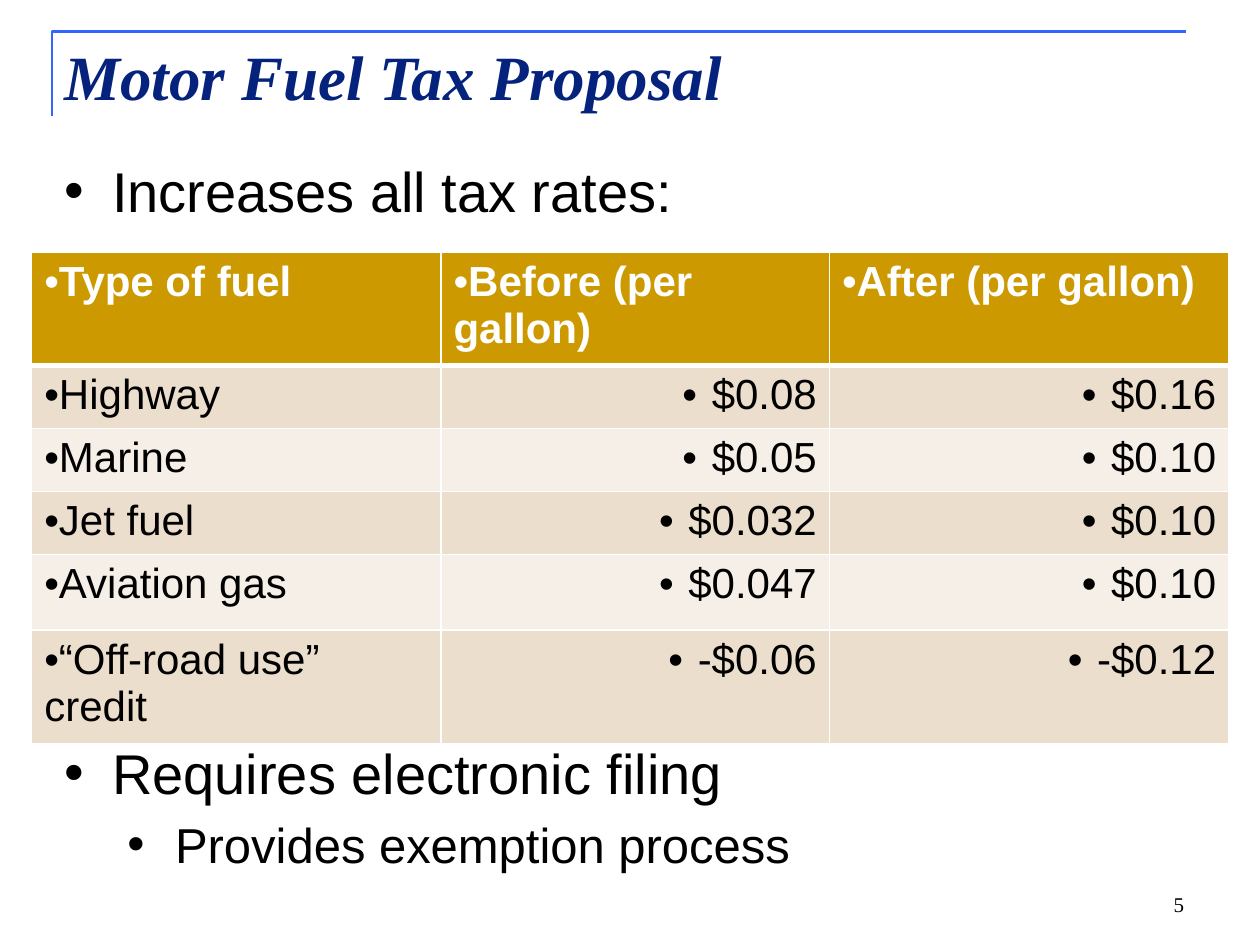
from lxml import etree
from pptx import Presentation
from pptx.dml.color import RGBColor
from pptx.enum.text import MSO_ANCHOR, PP_ALIGN
from pptx.oxml.ns import qn
from pptx.util import Cm, Pt

LEFT, RIGHT = PP_ALIGN.LEFT, PP_ALIGN.RIGHT
TOP, BOTTOM = MSO_ANCHOR.TOP, MSO_ANCHOR.BOTTOM

TITLE = "Motor Fuel Tax Proposal"
PAGE = "5"
POINTS = [
    {"text": "Increases all tax rates:", "style": "point", "level": 0, "before": 5},
    {"text": "Requires electronic filing", "style": "point", "level": 0, "before": 294},
    {"text": "Provides exemption process", "style": "subpoint", "level": 1, "before": 5},
]
RATES = [
    ("Type of fuel", "Before (per gallon)", "After (per gallon)"),
    ("Highway", "$0.08", "$0.16"),
    ("Marine", "$0.05", "$0.10"),
    ("Jet fuel", "$0.032", "$0.10"),
    ("Aviation gas", "$0.047", "$0.10"),
    ("“Off-road use” credit", "-$0.06", "-$0.12"),
]
COL_WIDTHS = (8.25, 7.83, 8.05)
ROW_HEIGHTS = (2.26, 1.27, 1.27, 1.27, 1.52, 2.29)
MARGIN, RULE_TOP = 1.05, 0.63
POINT_HANG, RATE_HANG, LEVEL_STEP = 0.96, 0.59, 1.27

THEME = {
    "rule": "3366FF",
    "header": "CC9900",
    "bands": ("F6EFE7", "ECDECC"),
    "border": "FFFFFF",
    "title": {"name": "Times New Roman", "size": 36, "color": "05227D", "bold": True, "italic": True},
    "page": {"name": "Times New Roman", "size": 12, "color": "000000"},
    "point": {"name": "Arial", "size": 32, "color": "000000"},
    "subpoint": {"name": "Arial", "size": 28, "color": "000000"},
    "head": {"name": "Arial", "size": 24, "color": "FFFFFF", "bold": True},
    "cell": {"name": "Arial", "size": 24, "color": "000000", "bold": False},
}


def write(p, text, style, align=LEFT, before=0):
    p.alignment, p.space_before = align, Pt(before)
    r = p.add_run()
    r.text = text
    for key, value in THEME[style].items():
        if key == "color":
            r.font.color.rgb = RGBColor.from_string(value)
        else:
            setattr(r.font, key, Pt(value) if key == "size" else value)


def add_bullet(p, margin, hang):
    pPr = p._p.get_or_add_pPr()
    pPr.set("marL", str(Cm(margin)))
    pPr.set("indent", str(Cm(-hang)))
    etree.SubElement(pPr, qn("a:buFont"), typeface="Arial")
    etree.SubElement(pPr, qn("a:buChar"), char="•")


def add_box(s, x, y, w, h, anchor=TOP):
    tf = s.shapes.add_textbox(Cm(x), Cm(y), Cm(w), Cm(h)).text_frame
    tf.word_wrap, tf.vertical_anchor = True, anchor
    return tf


def set_borders(cell, **widths):
    tcPr = cell._tc.get_or_add_tcPr()
    for side, width in widths.items():
        ln = etree.SubElement(tcPr, qn(f"a:ln{side}"), w=str(Pt(width)))
        fill = etree.SubElement(ln, qn("a:solidFill"))
        etree.SubElement(fill, qn("a:srgbClr"), val=THEME["border"])


def add_rule(s):
    fb = s.shapes.build_freeform(Cm(MARGIN), Cm(2.33))
    corner, end = (Cm(MARGIN), Cm(RULE_TOP)), (Cm(MARGIN + 22.86), Cm(RULE_TOP))
    fb.add_line_segments([corner, end], close=False)
    sp = fb.convert_to_shape()
    sp.shadow.inherit = False
    sp.fill.background()
    sp.line.color.rgb = RGBColor.from_string(THEME["rule"])
    sp.line.width = Pt(1.5)


def add_rates(s):
    table = s.shapes.add_table(
        len(RATES), len(COL_WIDTHS), Cm(0.64), Cm(5.08),
        Cm(sum(COL_WIDTHS)), Cm(sum(ROW_HEIGHTS))).table
    for col, width in zip(table.columns, COL_WIDTHS):
        col.width = Cm(width)
    for i, (row, height, texts) in enumerate(zip(table.rows, ROW_HEIGHTS, RATES)):
        row.height = Cm(height)
        color = THEME["bands"][i % 2] if i else THEME["header"]
        for j, (cell, text) in enumerate(zip(row.cells, texts)):
            is_rate = i > 0 and j > 0
            hang = RATE_HANG if is_rate else 0
            p = cell.text_frame.paragraphs[0]
            write(p, text, "cell" if i else "head", RIGHT if is_rate else LEFT)
            add_bullet(p, hang, hang)
            set_borders(cell, L=1, R=1, T=3 if i == 1 else 1, B=1 if i else 3)
            cell.fill.solid()
            cell.fill.fore_color.rgb = RGBColor.from_string(color)


def main():
    """Build the motor fuel tax slide."""
    prs = Presentation()
    prs.slide_width, prs.slide_height = Cm(25.4), Cm(19.05)
    s = prs.slides.add_slide(prs.slide_layouts[6])
    add_rule(s)
    write(add_box(s, 18.2, 17.33, 5.92, 1.27, BOTTOM).paragraphs[0], PAGE, "page", RIGHT)
    tf = add_box(s, MARGIN, 3.03, 24.13, 15.16)
    for i, point in enumerate(POINTS):
        p = tf.add_paragraph() if i else tf.paragraphs[0]
        p.level = point["level"]
        write(p, point["text"], point["style"], before=point["before"])
        add_bullet(p, POINT_HANG + LEVEL_STEP * p.level, POINT_HANG)
    write(add_box(s, MARGIN, 0.64, 14.15, 1.8).paragraphs[0], TITLE, "title", before=5)
    add_rates(s)
    prs.save("out.pptx")


if __name__ == "__main__":
    main()
